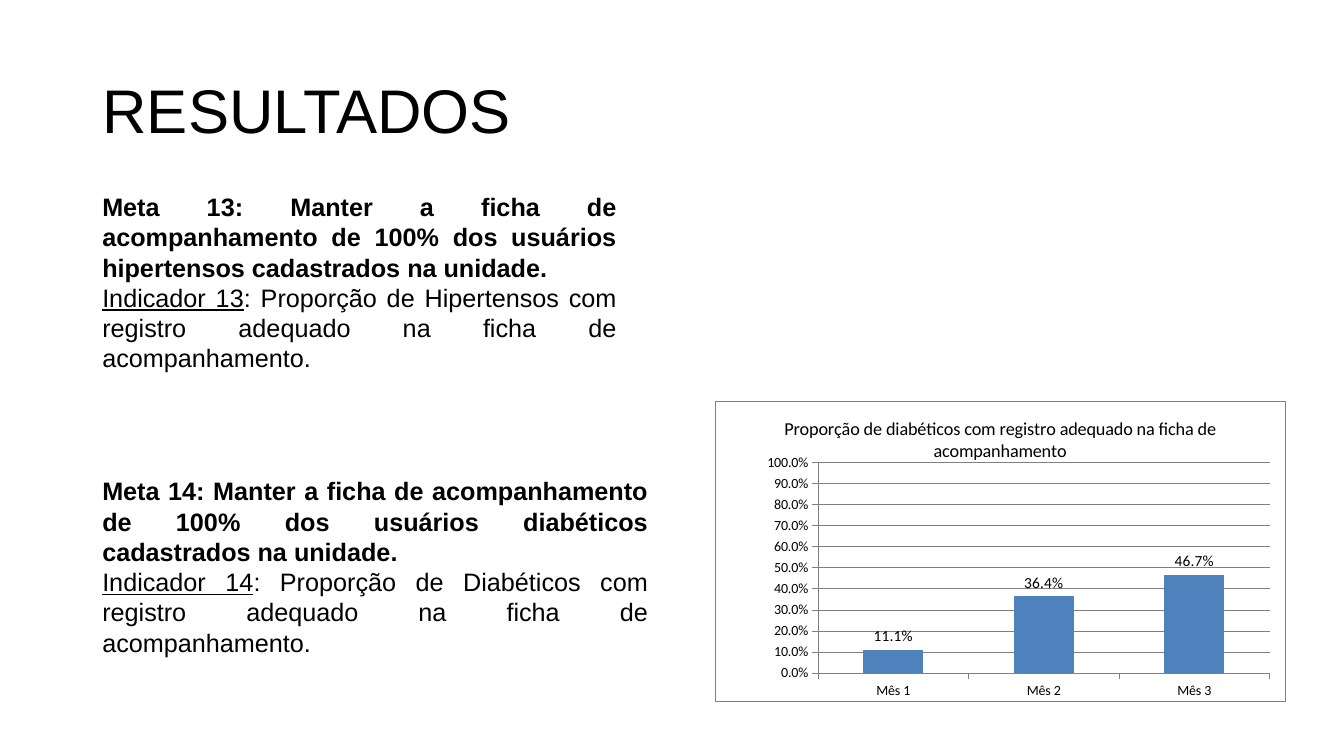
import pptx
import pptx.chart.data
import pptx.dml.color
import pptx.enum.chart
import pptx.enum.text
import pptx.oxml
import pptx.oxml.ns
import pptx.util

Pt = pptx.util.Pt
qn = pptx.oxml.ns.qn

COLORS = {"text": "000000", "paper": "FFFFFF", "line": "808080", "bar": "4F81BD"}
LEFT = 66
CHART_TITLE = "Proporção de diabéticos com registro adequado na ficha de acompanhamento"


def color(name):
    return pptx.dml.color.RGBColor.from_string(COLORS[name])


def set_font(font, name, size, bold=False):
    font.name = name
    font.size = Pt(size)
    font.bold = bold
    font.color.rgb = color("text")


def add_span(para, text, size, bold=False, underline=False):
    span = para.add_run()
    span.text = text
    set_font(span.font, "Arial", size, bold)
    span.font.underline = underline


def add_title(page, text):
    title = page.shapes.title
    title.left, title.top, title.width, title.height = Pt(LEFT), Pt(28.8), Pt(828), Pt(104.4)
    title.text_frame.vertical_anchor = pptx.enum.text.MSO_ANCHOR.MIDDLE
    para = title.text_frame.paragraphs[0]
    para.alignment = pptx.enum.text.PP_ALIGN.LEFT
    para.line_spacing = 0.9
    add_span(para, text, 44)


def add_goal(page, top, width, goal, indicator, description):
    box = page.shapes.add_textbox(Pt(LEFT), Pt(top), Pt(width), Pt(138.2))
    frame = box.text_frame
    frame.word_wrap = True
    frame.auto_size = pptx.enum.text.MSO_AUTO_SIZE.SHAPE_TO_FIT_TEXT
    goal_para, indicator_para = frame.paragraphs[0], frame.add_paragraph()
    for para in (goal_para, indicator_para):
        para.alignment = pptx.enum.text.PP_ALIGN.JUSTIFY
    add_span(goal_para, goal, 18, bold=True)
    add_span(indicator_para, indicator, 18, underline=True)
    add_span(indicator_para, description, 18)


def area_format(border):
    if border:
        line = f'<a:ln w="3175"><a:solidFill><a:srgbClr val="{COLORS["line"]}"/></a:solidFill></a:ln>'
    else:
        line = "<a:ln><a:noFill/></a:ln>"
    return pptx.oxml.parse_xml(
        f'<c:spPr {pptx.oxml.ns.nsdecls("c", "a")}><a:solidFill>'
        f'<a:srgbClr val="{COLORS["paper"]}"/></a:solidFill>{line}</c:spPr>')


def place_plot(plot_area, x, y, width, height):
    for layout in plot_area.findall(qn("c:layout")):
        plot_area.remove(layout)
    sizes = "".join(f'<c:{tag} val="{value}"/>' for tag, value in
                    (("x", x), ("y", y), ("w", width), ("h", height)))
    plot_area.insert(0, pptx.oxml.parse_xml(
        f'<c:layout {pptx.oxml.ns.nsdecls("c")}><c:manualLayout>'
        '<c:layoutTarget val="inner"/><c:xMode val="edge"/><c:yMode val="edge"/>'
        f'{sizes}</c:manualLayout></c:layout>'))


def style_line(line):
    line.color.rgb = color("line")
    line.width = Pt(0.25)


def style_axis(axis):
    axis.major_tick_mark = pptx.enum.chart.XL_TICK_MARK.OUTSIDE
    axis.minor_tick_mark = pptx.enum.chart.XL_TICK_MARK.NONE
    set_font(axis.tick_labels.font, "Calibri", 10)
    style_line(axis.format.line)


def add_column_chart(page):
    data = pptx.chart.data.CategoryChartData(number_format="0.0%")
    data.categories = ["Mês 1", "Mês 2", "Mês 3"]
    data.add_series(CHART_TITLE, (0.111, 0.364, 0.467))
    chart = page.shapes.add_chart(
        pptx.enum.chart.XL_CHART_TYPE.COLUMN_CLUSTERED,
        Pt(510.5), Pt(286.6), Pt(407.5), Pt(214.6), data).chart
    chart.has_legend = False
    set_font(chart.font, "Calibri", 11)

    # Chart title
    chart.has_title = True
    chart.chart_title.include_in_layout = False
    span = chart.chart_title.text_frame.paragraphs[0].add_run()
    span.text = CHART_TITLE
    set_font(span.font, "Calibri", 13)

    # Axes
    style_axis(chart.category_axis)
    value_axis = chart.value_axis
    style_axis(value_axis)
    value_axis.minimum_scale, value_axis.maximum_scale = 0, 1
    value_axis.major_unit = 0.1
    value_axis.tick_labels.number_format = "0.0%"
    value_axis.tick_labels.number_format_is_linked = False
    value_axis.has_major_gridlines = True
    style_line(value_axis.major_gridlines.format.line)

    # Columns and their labels
    plot = chart.plots[0]
    plot.gap_width = 150
    plot.vary_by_categories = False
    series = plot.series[0]
    series.format.fill.solid()
    series.format.fill.fore_color.rgb = color("bar")
    labels = series.data_labels
    labels.show_value = True
    labels.position = pptx.enum.chart.XL_LABEL_POSITION.OUTSIDE_END
    labels.number_format = "0.0%"
    labels.number_format_is_linked = False
    set_font(labels.font, "Calibri", 11)

    # Plot position and backgrounds
    chart_part = chart._chartSpace.find(qn("c:chart"))
    plot_area = chart_part.find(qn("c:plotArea"))
    place_plot(plot_area, 0.181, 0.203, 0.792, 0.702)
    plot_area.append(area_format(border=False))
    chart_part.addnext(area_format(border=True))


def main():
    deck = pptx.Presentation()
    deck.slide_width, deck.slide_height = Pt(960), Pt(540)
    page = deck.slides.add_slide(deck.slide_layouts[5])
    add_title(page, "RESULTADOS")
    add_goal(page, 133.2, 381.6,
             "Meta 13: Manter a ficha de acompanhamento de 100% dos usuários "
             "hipertensos cadastrados na unidade.",
             "Indicador 13",
             ": Proporção de Hipertensos com registro adequado na ficha de acompanhamento.")
    add_column_chart(page)
    add_goal(page, 336.2, 404,
             "Meta 14: Manter a ficha de acompanhamento de 100% dos usuários "
             "diabéticos cadastrados na unidade. ",
             "Indicador 14",
             ": Proporção de Diabéticos com registro adequado na ficha de acompanhamento.")
    deck.save("out.pptx")


if __name__ == "__main__":
    main()
